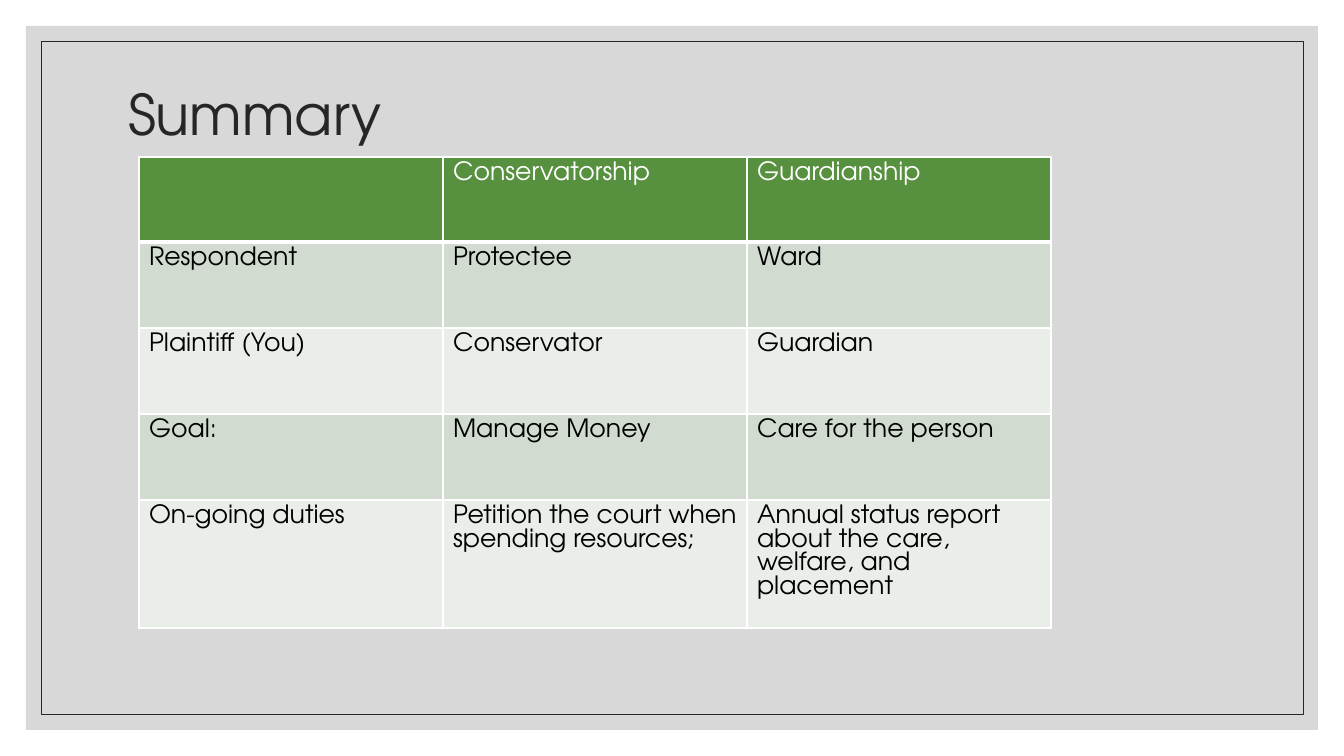
from dataclasses import dataclass

from lxml import etree
from pptx import Presentation
from pptx.dml.color import RGBColor
from pptx.enum.shapes import MSO_SHAPE
from pptx.enum.text import MSO_ANCHOR, MSO_AUTO_SIZE, PP_ALIGN
from pptx.oxml.ns import qn
from pptx.util import Pt

RECTANGLE = MSO_SHAPE.RECTANGLE
MIDDLE = MSO_ANCHOR.MIDDLE
TOP = MSO_ANCHOR.TOP
NO_AUTOFIT = MSO_AUTO_SIZE.NONE
LEFT = PP_ALIGN.LEFT
EMU_PER_PX = 914400 / 100.8
TITLE_ONLY = 5


@dataclass(frozen=True)
class Theme:
    font: str = "TeX Gyre Adventor"
    panel: str = "BFBFBF"
    ink: str = "262626"
    header: str = "57903F"
    bands: tuple = ("D1DBCF", "EAEEE8")
    body: str = "000000"
    white: str = "FFFFFF"
    title_size: int = 40
    table_size: int = 18
    outline_width: float = 0.5
    border_width: int = 1
    header_border_width: int = 3
    panel_opacity: int = 60


THEME = Theme()
COLUMN_WIDTH = 304
ROW_HEIGHTS = (85, 86, 86, 86, 128)
ROWS = (
    ("", "Conservatorship", "Guardianship"),
    ("Respondent", "Protectee", "Ward"),
    ("Plaintiff (You)", "Conservator", "Guardian"),
    ("Goal:", "Manage Money", "Care for the person"),
    (
        "On-going duties",
        "Petition the court when spending resources;",
        "Annual status report about the care, welfare, and placement",
    ),
)


def px(length):
    return round(length * EMU_PER_PX)


def rgb(value):
    return RGBColor.from_string(value)


def apply_format(target, values):
    for name, value in values.items():
        setattr(target, name, value)


def paint(fill, color):
    fill.solid()
    fill.fore_color.rgb = rgb(color)


def write(para, text, size, color):
    span = para.add_run()
    span.text = text
    apply_format(span.font, {"name": THEME.font, "size": Pt(size), "bold": False})
    span.font.color.rgb = rgb(color)


def add_rectangle(page, left, top, width, height):
    box = page.shapes.add_shape(RECTANGLE, px(left), px(top), px(width), px(height))
    box.shadow.inherit = False
    page.shapes.title.element.addprevious(box.element)
    return box


def add_panel(page):
    panel = add_rectangle(page, 26, 26, 1292, 704)
    paint(panel.fill, THEME.panel)
    panel.line.fill.background()
    color = panel.element.spPr.find(qn("a:solidFill"))[0]
    etree.SubElement(color, qn("a:alpha"), val=str(THEME.panel_opacity * 1000))


def add_outline(page):
    outline = add_rectangle(page, 41, 41, 1262, 673)
    outline.fill.background()
    outline.line.color.rgb = rgb(THEME.ink)
    outline.line.width = Pt(THEME.outline_width)


def set_title(page, text):
    title = page.shapes.title
    apply_format(title, {
        "left": px(118), "top": px(42), "width": px(1109), "height": px(151),
    })
    apply_format(title.text_frame, {
        "word_wrap": True, "auto_size": NO_AUTOFIT, "vertical_anchor": MIDDLE,
    })
    para = title.text_frame.paragraphs[0]
    apply_format(para, {"alignment": LEFT, "line_spacing": 0.9})
    write(para, text, THEME.title_size, THEME.ink)


def set_borders(cell, bottom_width):
    widths = dict.fromkeys(("lnL", "lnR", "lnT"), THEME.border_width)
    widths["lnB"] = bottom_width
    properties = cell._tc.get_or_add_tcPr()
    for side, width in widths.items():
        line = etree.SubElement(properties, qn(f"a:{side}"), w=str(Pt(width)))
        fill = etree.SubElement(line, qn("a:solidFill"))
        etree.SubElement(fill, qn("a:srgbClr"), val=THEME.white)


def format_cell(cell, text, row):
    is_header = row == 0
    set_borders(cell, THEME.header_border_width if is_header else THEME.border_width)
    paint(cell.fill, THEME.header if is_header else THEME.bands[(row - 1) % 2])
    cell.vertical_anchor = TOP
    if text:
        color = THEME.white if is_header else THEME.body
        write(cell.text_frame.paragraphs[0], text, THEME.table_size, color)


def add_summary_table(page):
    column_count = len(ROWS[0])
    table = page.shapes.add_table(
        len(ROWS), column_count, px(139), px(157),
        px(COLUMN_WIDTH * column_count), px(sum(ROW_HEIGHTS)),
    ).table
    table.horz_banding = False
    for column in table.columns:
        column.width = px(COLUMN_WIDTH)
    for row, (texts, height) in enumerate(zip(ROWS, ROW_HEIGHTS)):
        table.rows[row].height = px(height)
        for column, text in enumerate(texts):
            format_cell(table.cell(row, column), text, row)


def main():
    deck = Presentation()
    apply_format(deck, {"slide_width": px(1344), "slide_height": px(756)})
    page = deck.slides.add_slide(deck.slide_layouts[TITLE_ONLY])
    paint(page.background.fill, THEME.white)
    add_panel(page)
    add_outline(page)
    set_title(page, "Summary")
    add_summary_table(page)
    deck.save("out.pptx")


if __name__ == "__main__":
    main()
